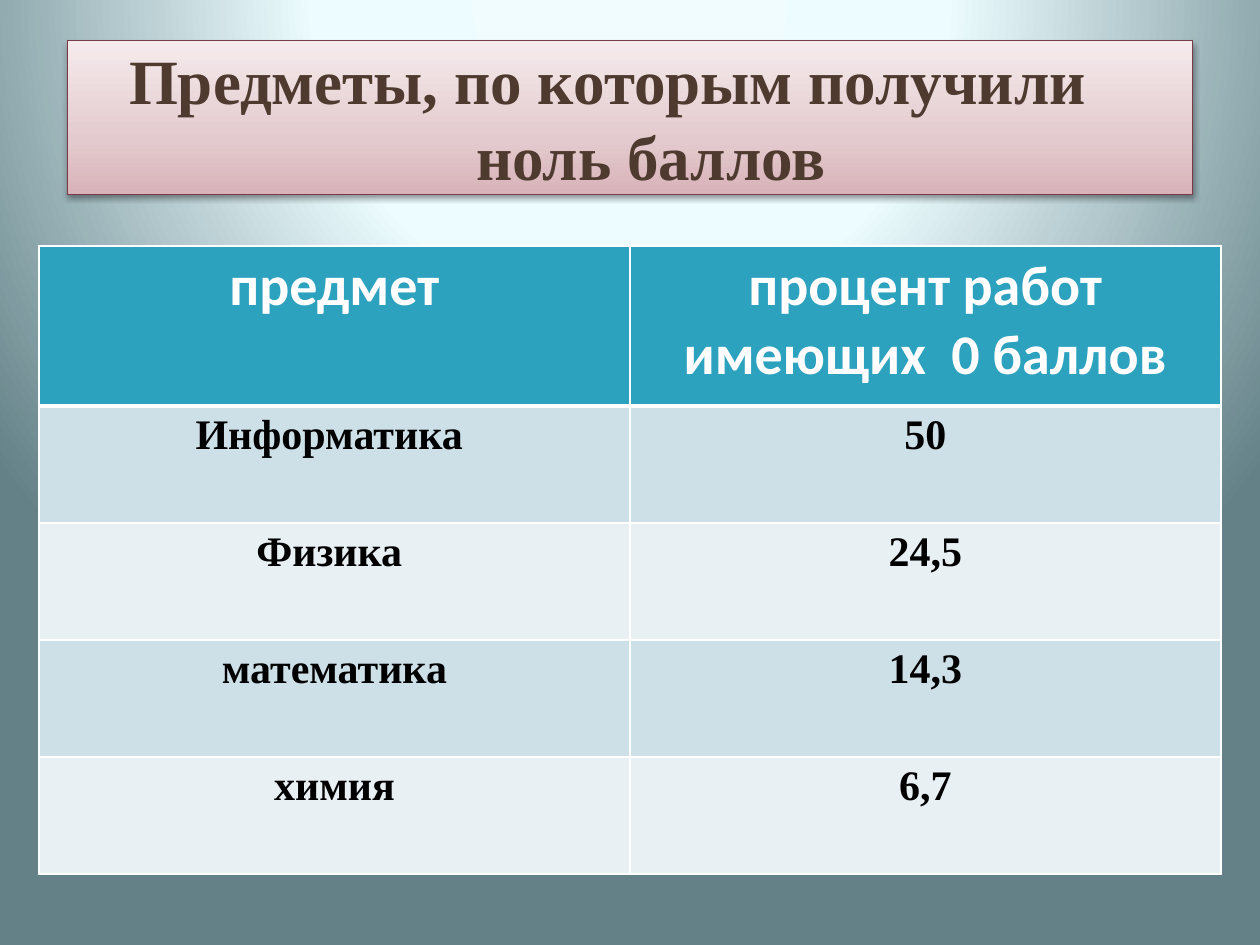
from lxml.etree import SubElement
from pptx import Presentation
from pptx.dml.color import RGBColor
from pptx.enum.text import MSO_ANCHOR, MSO_AUTO_SIZE, PP_ALIGN
from pptx.oxml import parse_xml
from pptx.oxml.ns import nsdecls, qn
from pptx.util import Pt

PX = 914400 // 126

TITLE_LINES = [("Предметы, по которым получили", 62), ("ноль баллов", 409)]  # text, indent
TITLE_BOX = (67, 41, 1126, 153)
TITLE_STOPS = [(0, "D8B3B9"), (35, "E3CACE"), (100, "F5EBEC")]
BACKGROUND_STOPS = [(0, "F1FCFF"), (40, "ECFCFF"), (100, "638187")]

HEADER = ("предмет", "процент работ имеющих  0 баллов")
SCORES = [
    ("Информатика ", "50"),
    ("Физика ", "24,5"),
    ("математика", "14,3"),
    ("химия", "6,7"),
]
TABLE_LEFT, TABLE_TOP, COLUMN_WIDTH = 39, 246, 591
HEADER_HEIGHT, ROW_HEIGHT = 160, 117
HEADER_FILL, BAND_FILLS = "2DA2BF", ("CDE0E8", "E8F0F4")


def px(*lengths):
    return [length * PX for length in lengths]


def rgb(value):
    return RGBColor.from_string(value)


def style(font, size, name, color):
    font.size, font.name, font.bold = Pt(size), name, True
    font.color.rgb = rgb(color)


def gradient(stops, direction):
    stop_xml = "".join(
        f'<a:gs pos="{position * 1000}"><a:srgbClr val="{color}"/></a:gs>'
        for position, color in stops
    )
    return parse_xml(
        f'<a:gradFill {nsdecls("a")} rotWithShape="1"><a:gsLst>{stop_xml}</a:gsLst>'
        f"{direction}</a:gradFill>"
    )


def replace_solid(parent, fill):
    parent.replace(parent.find(qn("a:solidFill")), fill)


def paint_background(slide):
    slide.background.fill.solid()
    replace_solid(
        slide.element.find(".//" + qn("p:bgPr")),
        gradient(
            BACKGROUND_STOPS,
            '<a:path path="circle">'
            '<a:fillToRect l="50000" t="-80000" r="50000" b="180000"/></a:path>',
        ),
    )


def add_title(slide):
    title = slide.shapes.title
    title.left, title.top, title.width, title.height = px(*TITLE_BOX)
    title.fill.solid()
    title.line.color.rgb = rgb("7C3947")
    title.line.width = Pt(0.5)
    properties = title.element.spPr
    replace_solid(properties, gradient(TITLE_STOPS, '<a:lin ang="16200000" scaled="1"/>'))
    properties.append(parse_xml(
        f'<a:effectLst {nsdecls("a")}><a:outerShdw blurRad="{Pt(3.5)}" dist="{Pt(2)}" '
        'dir="5400000" rotWithShape="0"><a:srgbClr val="000000"><a:alpha val="38000"/>'
        "</a:srgbClr></a:outerShdw></a:effectLst>"
    ))

    frame = title.text_frame
    frame.margin_left = frame.margin_top = frame.margin_right = frame.margin_bottom = 0
    frame.vertical_anchor = MSO_ANCHOR.MIDDLE
    frame.word_wrap = True
    frame.auto_size = MSO_AUTO_SIZE.SHAPE_TO_FIT_TEXT
    frame.text = "\n".join(text for text, _ in TITLE_LINES)
    for paragraph, (_, indent) in zip(frame.paragraphs, TITLE_LINES):
        paragraph.alignment = PP_ALIGN.LEFT
        paragraph.space_before = Pt(0)
        paragraph.line_spacing = 1.0
        properties = paragraph._p.get_or_add_pPr()
        properties.set("marL", str(indent * PX))
        properties.set("indent", "0")
        style(paragraph.runs[0].font, 36, "Times New Roman", "4E3A2F")


def set_borders(cell, top, bottom):
    properties = cell._tc.get_or_add_tcPr()
    for side, width in (("L", 1), ("R", 1), ("T", top), ("B", bottom)):
        border = SubElement(properties, qn(f"a:ln{side}"), w=str(Pt(width)))
        fill = SubElement(border, qn("a:solidFill"))
        SubElement(fill, qn("a:srgbClr"), val="FFFFFF")


def add_scores_table(slide):
    rows = [HEADER, *SCORES]
    table = slide.shapes.add_table(
        len(rows), len(HEADER),
        *px(TABLE_LEFT, TABLE_TOP, COLUMN_WIDTH * len(HEADER),
            HEADER_HEIGHT + ROW_HEIGHT * len(SCORES)),
    ).table
    for column in table.columns:
        column.width = COLUMN_WIDTH * PX
    for r, texts in enumerate(rows):
        is_header = r == 0
        table.rows[r].height = (HEADER_HEIGHT if is_header else ROW_HEIGHT) * PX
        for c, text in enumerate(texts):
            cell = table.cell(r, c)
            set_borders(cell, top=3 if r == 1 else 1, bottom=3 if is_header else 1)
            cell.fill.solid()
            cell.fill.fore_color.rgb = rgb(HEADER_FILL if is_header else BAND_FILLS[(r - 1) % 2])
            cell.text = text
            paragraph = cell.text_frame.paragraphs[0]
            paragraph.alignment = PP_ALIGN.CENTER
            font = paragraph.runs[0].font
            if is_header:
                style(font, 32, "Calibri", "FFFFFF")
            else:
                style(font, 24, "Times New Roman", "000000")


def main():
    presentation = Presentation()
    presentation.slide_width, presentation.slide_height = px(1260, 945)
    slide = presentation.slides.add_slide(presentation.slide_layouts.get_by_name("Title Only"))
    paint_background(slide)
    add_title(slide)
    add_scores_table(slide)
    presentation.save("out.pptx")


if __name__ == "__main__":
    main()
